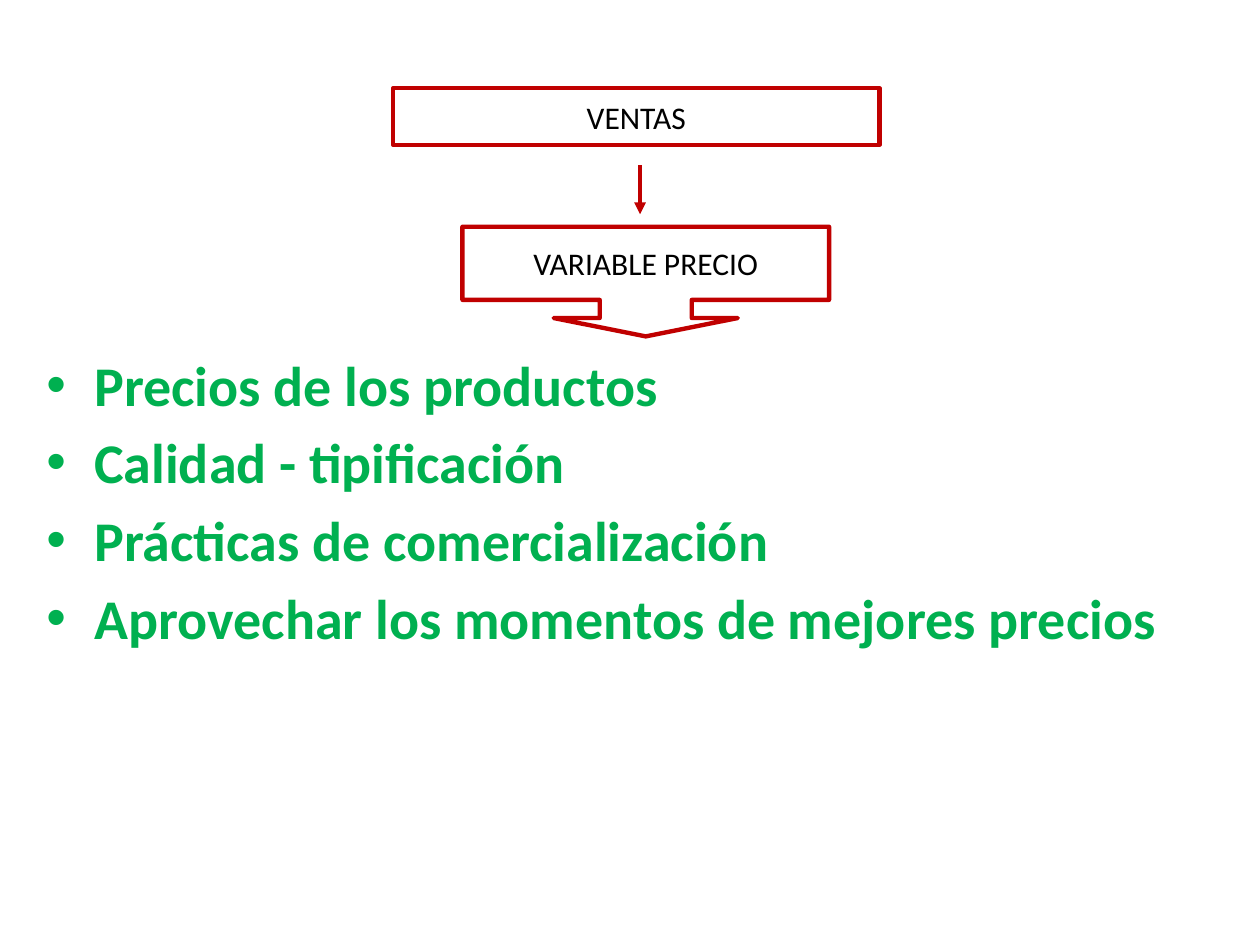
"""Build the sales and price variable slide."""
from dataclasses import dataclass

from lxml.etree import SubElement
from pptx import Presentation
from pptx.dml.color import RGBColor
from pptx.enum.shapes import MSO_CONNECTOR, MSO_SHAPE
from pptx.enum.text import MSO_ANCHOR, PP_ALIGN
from pptx.oxml.ns import qn
from pptx.slide import Slide
from pptx.util import Inches, Pt

COLORS = {"outline": "C00000", "paper": "FFFFFF", "label": "000000", "points": "00B050"}
POINTS = (
    "Precios de los productos",
    "Calidad - tipificación",
    "Prácticas de comercialización",
    "Aprovechar los momentos de mejores precios",
)


@dataclass(frozen=True)
class Box:
    label: str
    preset: MSO_SHAPE
    left: float
    top: float
    width: float
    height: float
    adjustments: tuple[float, ...] = ()


BOXES = (
    Box("VENTAS", MSO_SHAPE.RECTANGLE, 3.12, 0.7, 3.86, 0.45),
    Box("VARIABLE PRECIO", MSO_SHAPE.DOWN_ARROW_CALLOUT, 3.67, 1.8, 2.91, 0.87,
        (0.84, 0.84, 0.167, 0.667)),
)


def color(name: str) -> RGBColor:
    return RGBColor.from_string(COLORS[name])


def format_text(paragraph, size: float, color_name: str, bold: bool = False) -> None:
    for run in paragraph.runs:
        run.font.name = "Calibri"
        run.font.size = Pt(size)
        run.font.bold = bold
        run.font.color.rgb = color(color_name)


def draw_box(slide: Slide, box: Box) -> None:
    shape = slide.shapes.add_shape(box.preset, Inches(box.left), Inches(box.top),
                                   Inches(box.width), Inches(box.height))
    for index, value in enumerate(box.adjustments):
        shape.adjustments[index] = value
    shape.shadow.inherit = False
    shape.fill.solid()
    shape.fill.fore_color.rgb = color("paper")
    shape.line.color.rgb = color("outline")
    shape.line.width = Pt(2.5)
    frame = shape.text_frame
    frame.word_wrap = False
    frame.vertical_anchor = MSO_ANCHOR.MIDDLE
    frame.text = box.label
    frame.paragraphs[0].alignment = PP_ALIGN.CENTER
    format_text(frame.paragraphs[0], 18, "label")


def draw_arrow(slide: Slide, x: float, top: float, bottom: float) -> None:
    arrow = slide.shapes.add_connector(MSO_CONNECTOR.STRAIGHT, Inches(x), Inches(top),
                                       Inches(x), Inches(bottom))
    arrow.line.color.rgb = color("outline")
    arrow.line.width = Pt(2.25)
    SubElement(arrow.line._get_or_add_ln(), qn("a:tailEnd"), type="triangle")
    SubElement(arrow._element.spPr, qn("a:effectLst"))


def draw_points(slide: Slide) -> None:
    frame = slide.shapes.add_textbox(Inches(0.27), Inches(2.73),
                                     Inches(9.45), Inches(4.41)).text_frame
    frame.word_wrap = True
    frame.text = "\n".join(POINTS)
    for paragraph in frame.paragraphs:
        paragraph.space_before = Pt(6)
        format_text(paragraph, 32, "points", bold=True)
        properties = paragraph._p.get_or_add_pPr()
        properties.set("marL", str(Inches(0.38)))
        properties.set("indent", str(-Inches(0.38)))
        SubElement(properties, qn("a:buFont"), typeface="Arial")
        SubElement(properties, qn("a:buChar"), char="•")


def main() -> None:
    presentation = Presentation()
    presentation.slide_width = Inches(10)
    presentation.slide_height = Inches(7.5)
    slide = presentation.slides.add_slide(presentation.slide_layouts[6])
    draw_points(slide)
    for box in BOXES:
        draw_box(slide, box)
    draw_arrow(slide, 5.08, 1.31, 1.7)
    presentation.save("out.pptx")


if __name__ == "__main__":
    main()
